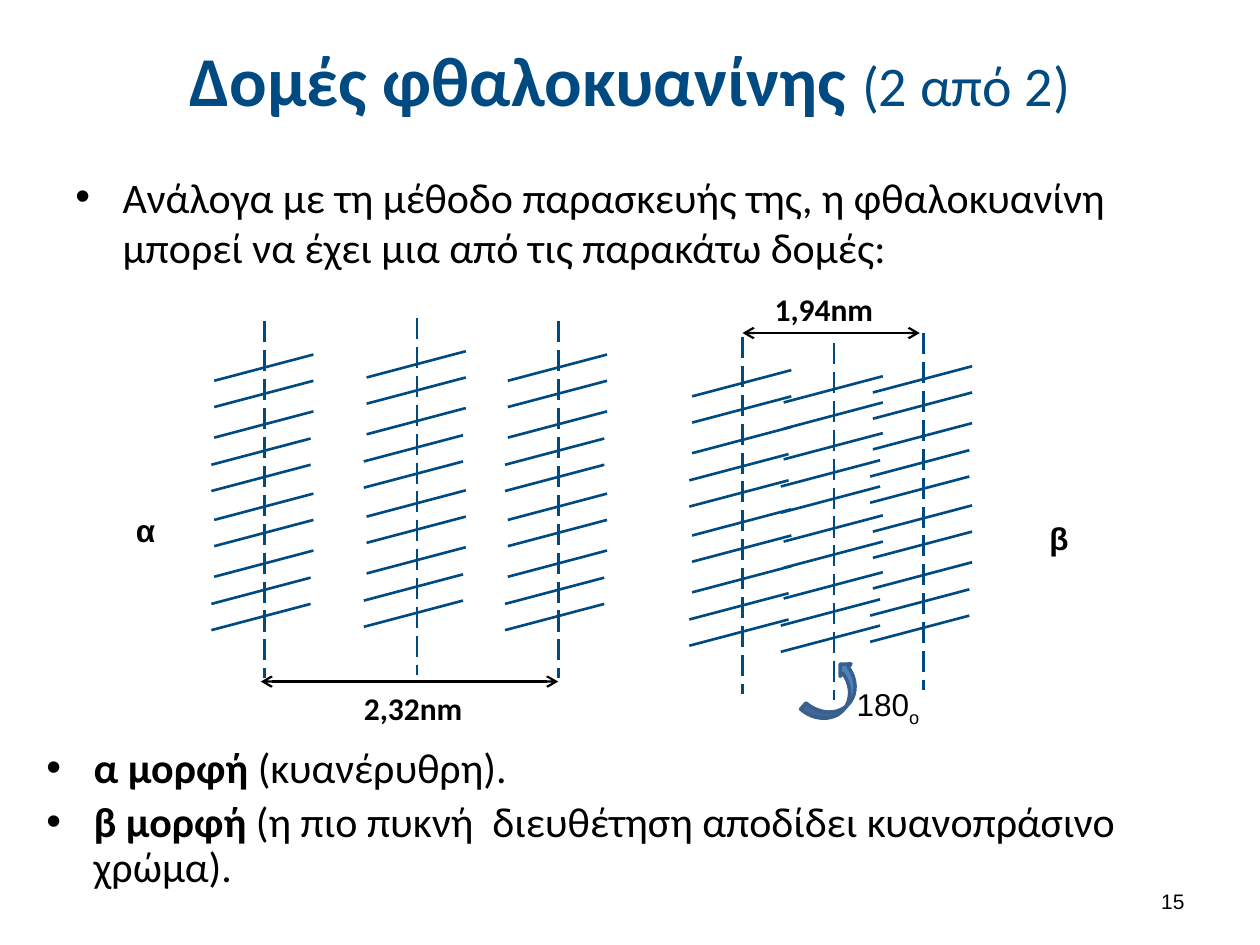
from lxml.etree import SubElement
from pptx import Presentation
from pptx.dml.color import RGBColor
from pptx.enum.dml import MSO_LINE
from pptx.enum.shapes import MSO_CONNECTOR, MSO_SHAPE
from pptx.enum.text import MSO_ANCHOR, MSO_AUTO_SIZE, PP_ALIGN
from pptx.oxml.ns import qn
from pptx.util import Pt

BLUE = "004A82"
BLACK = "000000"
AXIS_LENGTH = 204
STROKE_WIDTH, STROKE_RISE = 56.7, 15
STROKE_OFFSETS = [34, 49, 66.5, 82, 97, 113.5, 128.5, 146, 161.5, 176.5]
SHIFTED_STROKES = {3, 4, 8, 9}


def color(value):
    """Turn a hex string into a colour."""
    return RGBColor.from_string(value)


def write(paragraph, text, size=18, font="Calibri", fill=BLACK, bold=False, baseline=0):
    """Add a formatted run of text to a paragraph."""
    run = paragraph.add_run()
    run.text = text
    run.font.size = Pt(size)
    run.font.name = font
    run.font.bold = bold
    run.font.color.rgb = color(fill)
    if baseline:
        run.font._element.set("baseline", str(baseline * 1000))


class SlideBuilder:
    """Hold the line style and the slide that is being drawn."""

    line_width = 1.5
    line_color = BLUE

    def __init__(self, slide):
        """Start drawing directly on the slide."""
        self.slide = slide
        self.shapes = slide.shapes

    def start_group(self):
        """Send the next elements to a new group."""
        self.shapes = self.slide.shapes.add_group_shape().shapes

    def end_group(self):
        """Send the next elements to the slide again."""
        self.shapes = self.slide.shapes

    def text_box(self, left, top, width, height, anchor=MSO_ANCHOR.TOP, wrap=True):
        """Add an empty text box and return its text frame."""
        frame = self.shapes.add_textbox(Pt(left), Pt(top), Pt(width), Pt(height)).text_frame
        frame.word_wrap = wrap
        frame.vertical_anchor = anchor
        frame.auto_size = MSO_AUTO_SIZE.NONE if wrap else MSO_AUTO_SIZE.SHAPE_TO_FIT_TEXT
        return frame

    def label(self, left, top, width, text, **style):
        """Add a one-line label and return its paragraph."""
        paragraph = self.text_box(left, top, width, 29, wrap=False).paragraphs[0]
        write(paragraph, text, **style)
        return paragraph

    def bullets(self, left, top, width, height, items, spacing=None):
        """Add a bulleted list of (text, bold) runs."""
        frame = self.text_box(left, top, width, height)
        for index, runs in enumerate(items):
            paragraph = frame.add_paragraph() if index else frame.paragraphs[0]
            if spacing:
                paragraph.line_spacing = spacing
            if index:
                paragraph.space_before = Pt(4.8)
            properties = paragraph._p.get_or_add_pPr()
            properties.set("marL", str(Pt(27)))
            properties.set("indent", str(-Pt(27)))
            SubElement(properties, qn("a:buFont"), typeface="Arial")
            SubElement(properties, qn("a:buChar"), char="•")
            for text, bold in runs:
                write(paragraph, text, size=24, bold=bold)

    def line(self, x1, y1, x2, y2, width=None, stroke=None):
        """Add a straight line without a shadow."""
        connector = self.shapes.add_connector(
            MSO_CONNECTOR.STRAIGHT, Pt(x1), Pt(y1), Pt(x2), Pt(y2))
        connector.line.width = Pt(width or self.line_width)
        connector.line.color.rgb = color(stroke or self.line_color)
        SubElement(connector._element.spPr, qn("a:effectLst"))
        return connector

    def dimension(self, x1, x2, y):
        """Add a horizontal line with an arrowhead at each end."""
        connector = self.line(x1, y, x2, y, width=1.25, stroke=BLACK)
        outline = connector.line._get_or_add_ln()
        for end in ("a:headEnd", "a:tailEnd"):
            SubElement(outline, qn(end), type="arrow")

    def stack(self, axis, top):
        """Add a dashed axis crossed by a stack of slanted strokes."""
        self.line(axis, top, axis, top + AXIS_LENGTH).line.dash_style = MSO_LINE.LONG_DASH
        for index, offset in enumerate(STROKE_OFFSETS):
            left = axis - (30.4 if index in SHIFTED_STROKES else 28.8)
            bottom = top + offset
            self.line(left, bottom, left + STROKE_WIDTH, bottom - STROKE_RISE)

    def rotation_arrow(self, left, top, width, height, angle):
        """Add a curved arrow that marks a rotation."""
        shape = self.shapes.add_shape(
            MSO_SHAPE.CURVED_UP_ARROW, Pt(left), Pt(top), Pt(width), Pt(height))
        shape.rotation = angle
        shape.shadow.inherit = False
        shape.fill.solid()
        shape.fill.fore_color.rgb = color("4F81BD")
        shape.line.color.rgb = color("3A5F8C")
        shape.line.width = Pt(2)


def main():
    """Build the slide and save it."""
    presentation = Presentation()
    presentation.slide_width, presentation.slide_height = Pt(720), Pt(540)
    slide = presentation.slides.add_slide(presentation.slide_layouts[6])
    builder = SlideBuilder(slide)

    title = builder.text_box(0, 9.4, 720, 71.3, anchor=MSO_ANCHOR.MIDDLE).paragraphs[0]
    title.alignment = PP_ALIGN.CENTER
    write(title, "Δομές φθαλοκυανίνης ", size=40, fill=BLUE, bold=True)
    write(title, "(2 από 2)", size=32, fill=BLUE)

    builder.bullets(36, 94.3, 648, 73.4, [
        [("Ανάλογα με τη μέθοδο παρασκευής της, η φθαλοκυανίνη μπορεί να έχει "
          "μια από τις παρακάτω δομές:", False)],
    ])
    builder.bullets(19.4, 423.4, 664.6, 91.4, [
        [("α μορφή ", True), ("(κυανέρυθρη).", False)],
        [("β μορφή ", True),
         ("(η πιο πυκνή  διευθέτηση αποδίδει κυανοπράσινο χρώμα).", False)],
    ], spacing=0.9)

    builder.start_group()
    for axis, top in [(151.2, 183.6), (238.3, 181.7), (319, 183.6)]:
        builder.stack(axis, top)
    builder.dimension(149, 319, 389.5)
    builder.label(200.9, 390.2, 70.6, "2,32nm", bold=True)

    builder.start_group()
    for axis, top in [(424.3, 192.5), (476.6, 196), (527.6, 190.3)]:
        builder.stack(axis, top)
    builder.dimension(424.3, 525.6, 190.3)
    builder.label(435.6, 162, 71.3, "1,94nm", bold=True)
    builder.rotation_arrow(457.9, 387.4, 38.9, 18.7, 311.2)
    angle = builder.label(482.4, 388.1, 51.8, "180", font="Arial")
    write(angle, "ο", font="Arial", baseline=-25)

    builder.end_group()
    builder.label(70.6, 288.7, 25.2, "α", font="Arial", bold=True)
    builder.label(592.6, 293, 24.5, "β", font="Arial", bold=True)
    number = builder.text_box(516.2, 500.4, 167.8, 28.8, anchor=MSO_ANCHOR.MIDDLE).paragraphs[0]
    number.alignment = PP_ALIGN.RIGHT
    write(number, "15", size=12, font="Arial")

    presentation.save("out.pptx")


if __name__ == "__main__":
    main()
